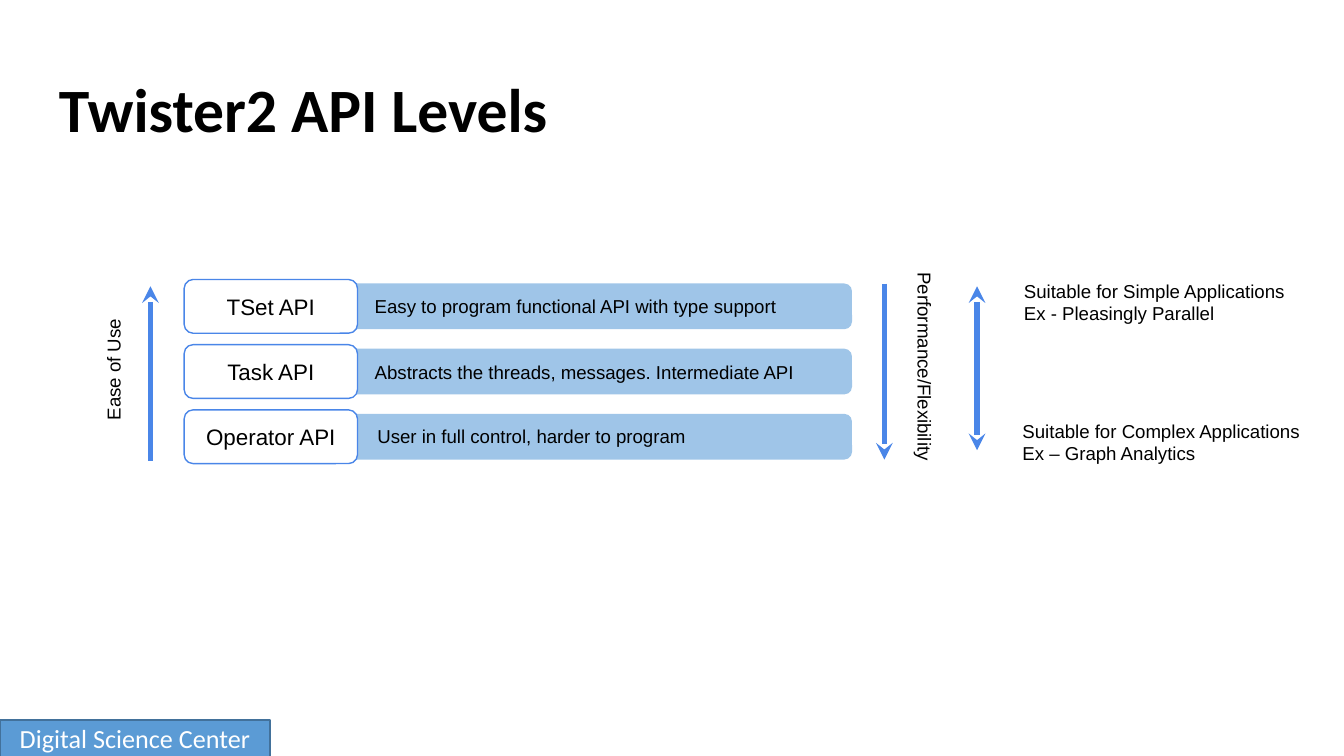
from lxml import etree
from pptx import Presentation
from pptx import util as u
from pptx.dml.color import RGBColor
from pptx.enum import shapes, text
from pptx.oxml.ns import qn

COLORS = {
    "black": "000000", "white": "FFFFFF", "bar": "9FC5E8", "accent": "4A86E8",
    "footer": "5B9BD5", "footer_line": "42719B",
}

# Widescreen 16:9 slide
deck = Presentation()
deck.slide_width, deck.slide_height = u.Inches(10), u.Inches(10 * 9 / 16)
slide = deck.slides.add_slide(deck.slide_layouts[6])


def add_box(kind, place, fill, line=None, line_width=0.75):
    box = slide.shapes.add_shape(kind, *map(u.Inches, place))
    box.shadow.inherit = False
    box.fill.solid()
    box.fill.fore_color.rgb = RGBColor.from_string(COLORS[fill])
    if line:
        box.line.color.rgb = RGBColor.from_string(COLORS[line])
        box.line.width = u.Pt(line_width)
    else:
        box.line.fill.background()
    return box


def write(box, lines, size, font="Arial", color="black", bold=False,
          align=text.PP_ALIGN.LEFT, anchor=text.MSO_ANCHOR.TOP, inset=0.1):
    frame = box.text_frame
    frame.word_wrap = True
    frame.vertical_anchor = anchor
    frame.margin_left = frame.margin_right = u.Inches(inset)
    frame.margin_top = frame.margin_bottom = u.Inches(inset)
    for i, line in enumerate(lines):
        paragraph = frame.add_paragraph() if i else frame.paragraphs[0]
        paragraph.alignment = align
        run = paragraph.add_run()
        run.text = line
        run.font.size, run.font.name, run.font.bold = u.Pt(size), font, bold
        run.font.color.rgb = RGBColor.from_string(COLORS[color])


centered = {"align": text.PP_ALIGN.CENTER, "anchor": text.MSO_ANCHOR.MIDDLE}

# Footer
footer = add_box(shapes.MSO_SHAPE.RECTANGLE, (0, 5.36, 2.01, 0.27),
                 "footer", "footer_line", 1)
write(footer, ["Digital Science Center"], 14, "Calibri", "white", inset=0.04, **centered)

# Title
title = slide.shapes.add_textbox(*map(u.Inches, (0.34, 0.49, 9.32, 0.63)))
write(title, ["Twister2 API Levels"], 33, "Calibri", bold=True)
title.text_frame.paragraphs[0].line_spacing = 0.9

# API levels: a description bar with a name box over its left end
levels = [
    ("TSet API", "Easy to program functional API with type support", 2.69, 2.11),
    ("Task API", "Abstracts the threads, messages. Intermediate API", 2.69, 2.60),
    ("Operator API", "User in full control, harder to program", 2.71, 3.08),
]
first_top, last_top = 2.08, 3.05
row_pitch = (last_top - first_top) / (len(levels) - 1)
for i, (name, description, text_left, text_top) in enumerate(levels):
    top = first_top + i * row_pitch
    add_box(shapes.MSO_SHAPE.ROUNDED_RECTANGLE, (2.58, top + 0.03, 3.76, 0.34), "bar")
    level = add_box(shapes.MSO_SHAPE.ROUNDED_RECTANGLE, (1.37, top, 1.29, 0.4),
                    "white", "accent")
    write(level, [name], 12, **centered)
    caption = slide.shapes.add_textbox(*map(u.Inches, (text_left, text_top, 3.53, 0.21)))
    write(caption, [description], 10)

# Trend arrows: x, start, end, arrowheads
arrows = [
    (1.12, 3.43, 2.13, ["tailEnd"]),
    (6.58, 2.11, 3.42, ["tailEnd"]),
    (7.27, 2.13, 3.35, ["headEnd", "tailEnd"]),
]
for x, start, end, heads in arrows:
    arrow = slide.shapes.add_connector(
        shapes.MSO_CONNECTOR.STRAIGHT, *map(u.Inches, (x, start, x, end)))
    arrow.line.color.rgb = RGBColor.from_string(COLORS["accent"])
    arrow.line.width = u.Pt(3)
    outline = arrow._element.spPr.find(qn("a:ln"))
    for head in heads:
        etree.SubElement(outline, qn(f"a:{head}"), type="stealth")
    etree.SubElement(arrow._element.spPr, qn("a:effectLst"))

# Arrow labels: place, rotation, lines
labels = [
    ((0.23, 2.57, 1.1, 0.21), 270, ["Ease of Use"]),
    ((6.03, 2.74, 1.83, 0.21), 90, ["Performance/Flexibility"]),
    ((7.52, 1.98, 2.15, 0.21), 0,
     ["Suitable for Simple Applications", "Ex - Pleasingly Parallel"]),
    ((7.51, 3.02, 2.33, 0.21), 0,
     ["Suitable for Complex Applications", "Ex – Graph Analytics"]),
]
for place, rotation, lines in labels:
    label = slide.shapes.add_textbox(*map(u.Inches, place))
    label.rotation = rotation
    write(label, lines, 10)

deck.save("out.pptx")
